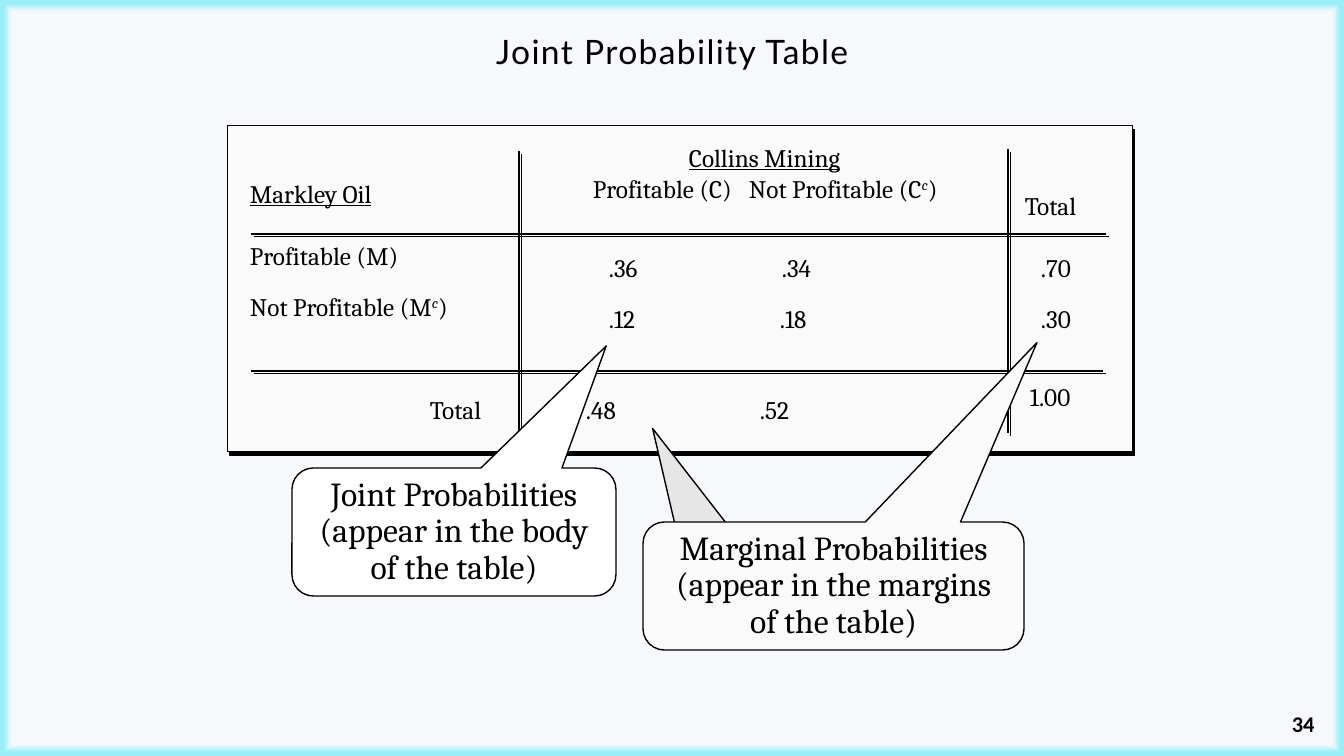
"""Build the joint probability table slide with its two callouts."""
from lxml.etree import SubElement
from pptx import Presentation
from pptx.dml.color import RGBColor
from pptx.enum.shapes import MSO_CONNECTOR, MSO_SHAPE
from pptx.enum.text import MSO_ANCHOR, PP_ALIGN
from pptx.oxml import parse_xml
from pptx.oxml.ns import qn
from pptx.util import Emu, Pt

COLORS = {"ink": "000000", "panel": "FAFAFA", "white": "FFFFFF", "wedge": "E6E6E6",
          "page": "F6F8FC", "glow": "98EFF8", "edge": "C7D5ED"}
NS = "http://schemas.openxmlformats.org/drawingml/2006/main"


def px(*lengths):
    return [Emu(round(n * 12192000 / 1344)) for n in lengths]


def add_shadow(sp, distance, angle):
    effects = SubElement(sp._element.spPr, qn("a:effectLst"))
    shadow = SubElement(effects, qn("a:outerShdw"), blurRad="0", dist=str(Pt(distance)),
                        dir=str(angle * 60000), algn="ctr", rotWithShape="0")
    SubElement(shadow, qn("a:srgbClr"), val=COLORS["ink"])


prs = Presentation()
prs.slide_width, prs.slide_height = px(1344, 756)
s = prs.slides.add_slide(prs.slide_layouts[6])
ink = RGBColor.from_string(COLORS["ink"])

s.background.fill.solid()
bg = s.background._cSld.bg.bgPr
stops = "".join(f'<a:gs pos="{pos}000"><a:srgbClr val="{COLORS[name]}"/></a:gs>'
                for pos, name in ((0, "page"), (97, "page"), (99, "glow"),
                                  (100, "glow"), (100, "edge")))
bg.replace(bg.find(qn("a:solidFill")), parse_xml(
    f'<a:gradFill xmlns:a="{NS}" rotWithShape="1"><a:gsLst>{stops}</a:gsLst>'
    '<a:path path="shape"><a:fillToRect l="50000" t="50000" r="50000" b="50000"/></a:path>'
    '</a:gradFill>'))

for text, box, size, font, bold, align, spacing in (
        ("34", (1282, 705, 47, 37), 16, "Calibri", True, PP_ALIGN.LEFT, "0"),
        ("Joint Probability Table", (244, 10, 857, 82), 24, "Lato", False,
         PP_ALIGN.CENTER, "100")):
    tf = s.shapes.add_textbox(*px(*box)).text_frame
    tf.word_wrap = align == PP_ALIGN.CENTER
    tf.vertical_anchor = MSO_ANCHOR.MIDDLE
    p = tf.paragraphs[0]
    p.text, p.alignment = text, align
    r = p.runs[0]
    r.font.name, r.font.size, r.font.bold = font, Pt(size), bold
    r.font.color.rgb = ink
    r.font._element.set("spc", spacing)

panel = s.shapes.add_shape(MSO_SHAPE.RECTANGLE, *px(227, 125, 905, 326))
panel.fill.solid()
panel.fill.fore_color.rgb = RGBColor.from_string(COLORS["panel"])
panel.line.color.rgb = ink
panel.line.width = Pt(0.5)
add_shadow(panel, 3.6, 56)

for ends in ((251, 234, 1106, 234), (251, 371, 1103, 371),
             (519, 151, 519, 435), (1008, 149, 1008, 433)):
    rule = s.shapes.add_connector(MSO_CONNECTOR.STRAIGHT, *px(*ends))
    rule.line.color.rgb = ink
    rule.line.width = Pt(1)
    add_shadow(rule, 2.8, 45)

labels = (
    ("Collins Mining", 689, 142, 170), ("Profitable (C)", 593, 173, 150),
    ("Not Profitable (C^c)", 749, 173, 210), ("Markley Oil", 250, 178, 150),
    ("Total", 1025, 190, 70), ("Profitable (M)", 250, 240, 170),
    (".36", 609, 252, 50), (".34", 782, 252, 50), (".70", 1041, 252, 50),
    ("Not Profitable (M^c)", 250, 291, 230),
    (".12", 609, 303, 50), (".18", 780, 303, 50), (".30", 1041, 303, 50),
    ("Total", 430, 394, 70), (".48", 586, 394, 50), (".52", 760, 394, 50),
    ("1.00", 1030, 381, 60))
for text, left, top, width in labels:
    tf = s.shapes.add_textbox(*px(left, top, width, 31)).text_frame
    tf.word_wrap = True
    tf.margin_left = tf.margin_top = tf.margin_right = tf.margin_bottom = 0
    p = tf.paragraphs[0]
    head, mark, tail = text.partition("^")
    for part in filter(None, (head, tail[:1], tail[1:])):
        r = p.add_run()
        r.text = part
        r.font.name, r.font.size = "Cambria", Pt(18)
        r.font.color.rgb = ink
        r.font.underline = text in ("Collins Mining", "Markley Oil")
        if mark and part == "c":
            r.font.italic = True
            r.font._element.set("baseline", "30000")

callout = MSO_SHAPE.ROUNDED_RECTANGULAR_CALLOUT
for kind, box, turn, adjustments, fill, lines in (
        (callout, (292, 468, 324, 128), 0, (0.47, -1.454, 0.167), "white",
         ("Joint Probabilities", "(appear in the body", "of the table)")),
        (MSO_SHAPE.ISOSCELES_TRIANGLE, (665, 421, 53, 115), 346.9, (0,), "wedge", ()),
        (callout, (643, 522, 381, 128), 0, (0.534, -1.902, 0.167), "panel",
         ("Marginal Probabilities", "(appear in the margins", "of the table)"))):
    sp = s.shapes.add_shape(kind, *px(*box))
    sp.shadow.inherit = False
    sp.rotation = turn
    for i, value in enumerate(adjustments):
        sp.adjustments[i] = value
    sp.fill.solid()
    sp.fill.fore_color.rgb = RGBColor.from_string(COLORS[fill])
    sp.line.color.rgb = ink
    sp.line.width = Pt(1)
    if lines:
        tf = sp.text_frame
        tf.margin_left = tf.margin_top = tf.margin_right = tf.margin_bottom = 0
        tf.vertical_anchor = MSO_ANCHOR.MIDDLE
        tf.text = "\n".join(lines)
        for p in tf.paragraphs:
            p.alignment, p.line_spacing = PP_ALIGN.CENTER, 0.9
            r = p.runs[0]
            r.font.name, r.font.size = "Cambria", Pt(24)
            r.font.color.rgb = ink

prs.save("out.pptx")
